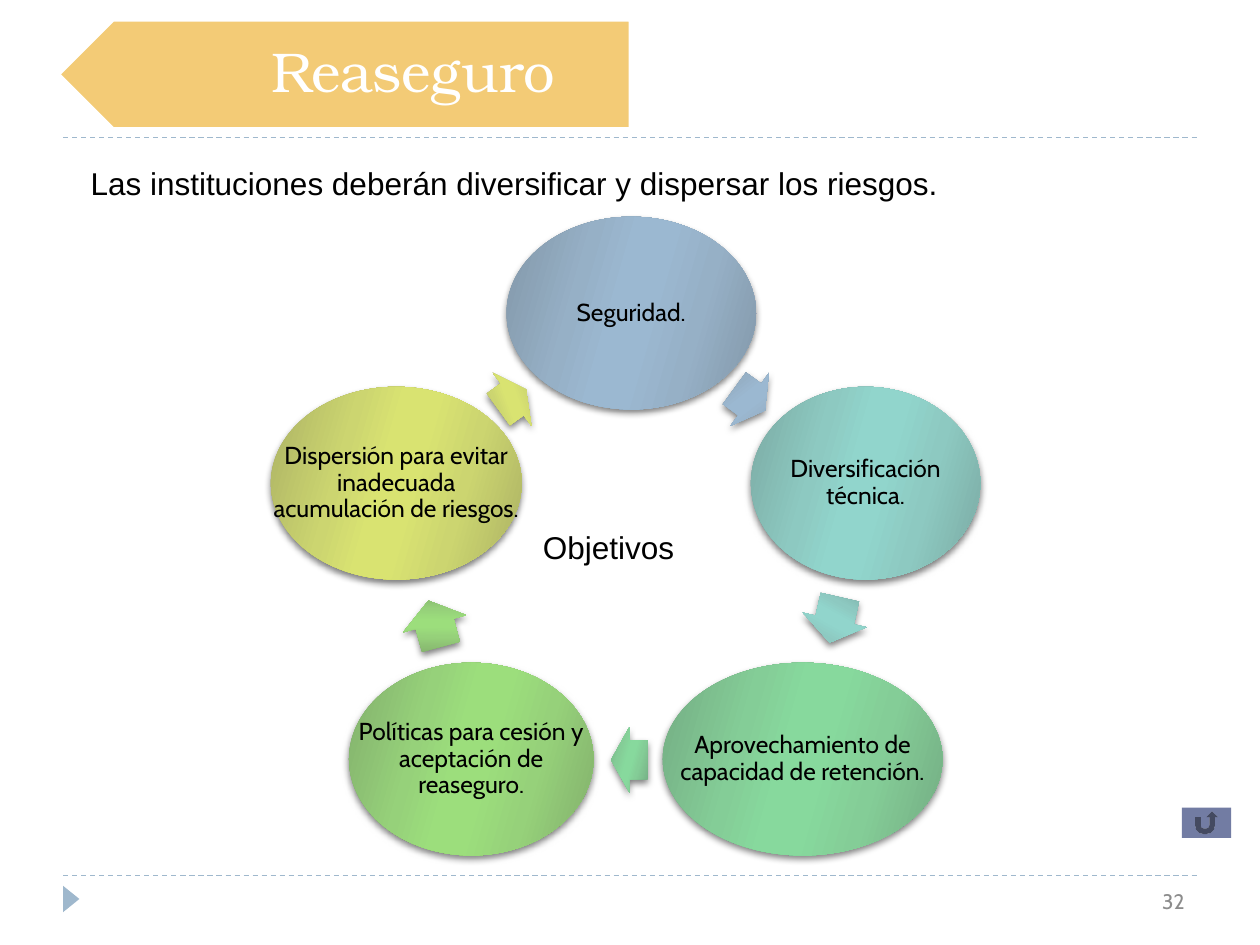
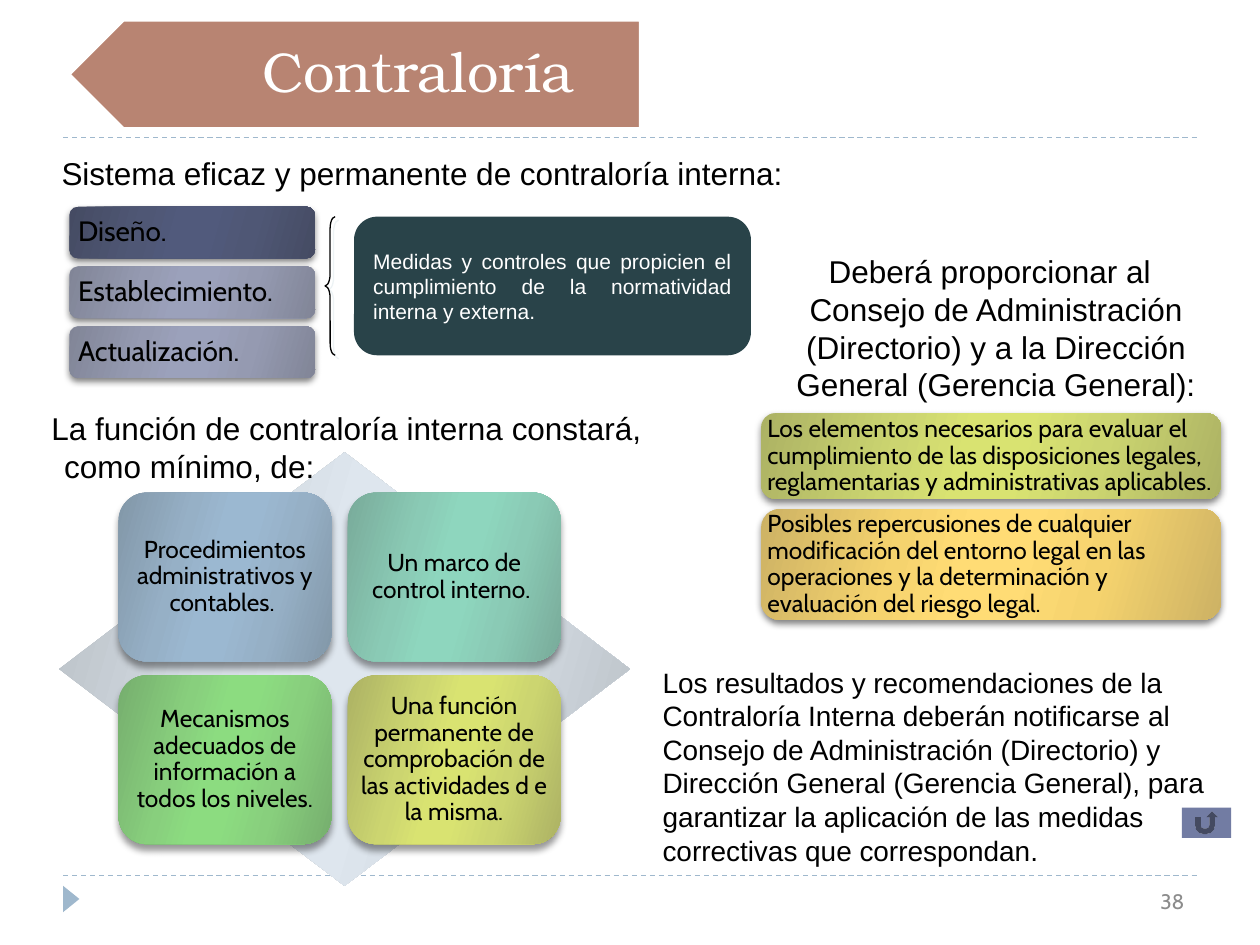
"""Build two Spanish insurance slides: reinsurance goals and internal control."""
from lxml import etree
from pptx import Presentation
from pptx import util as u
from pptx.dml.color import RGBColor
from pptx.enum import dml, shapes, text
from pptx.oxml.ns import qn

WHITE = RGBColor(255, 255, 255)
BLACK = RGBColor(0, 0, 0)
GREY = RGBColor(0x8C, 0x8C, 0x8C)
RULE_BLUE = RGBColor(0x9F, 0xB8, 0xCD)
BUTTON_BLUE = RGBColor(0x72, 0x7C, 0xA3)
DARK_TEAL = RGBColor(0x29, 0x43, 0x49)
PALE_TEAL = RGBColor(0xDD, 0xE9, 0xEC)
GOLD = RGBColor(0xF3, 0xCB, 0x76)
TERRACOTTA = RGBColor(0xB8, 0x84, 0x72)


BLUE, TEAL, EMERALD, GREEN, LIME, MINT, LEAF, AMBER, NAVY, LILAC, MIST = [
    [RGBColor.from_string(code) for code in codes.split()]
    for codes in (
        "8297A8 96B0C6 9BB8D1", "7BAAA3 8DC9C1 91D5CC", "74AC83 84CD97 87D99D",
        "82AF6C 96D17A 9CDE7C", "ACB264 CCD570 D9E371", "79AB9A 8ACAB5 8ED6BE",
        "76AE6E 88CF7D 8CDC80", "CDB264 F5D36E FFDC75", "454B63 4F5775 515A7C",
        "818597 959AB1 9BA1BB", "B6BCC2 D4DCE3 DEE6EE",
    )
]
SOFT_SHADOW = (BLACK, 50, 4, 2, 90)
CARD_SHADOW = (BLACK, 40, 4, 3.4, 90)
BRACE_SHADOW = (PALE_TEAL, 50, 0, 2.8, 45)
ROUND_CORNER_INSET = 0.0488
LEFT, CENTER, RIGHT, JUSTIFY = (text.PP_ALIGN.LEFT, text.PP_ALIGN.CENTER,
                                text.PP_ALIGN.RIGHT, text.PP_ALIGN.JUSTIFY)
TOP, MIDDLE = text.MSO_ANCHOR.TOP, text.MSO_ANCHOR.MIDDLE
KIND = shapes.MSO_SHAPE


def write_text(shape, words, size=18, font="Arial", color=BLACK, align=LEFT, anchor=TOP,
               insets=(0.1, 0.05), spacing=1.0, hanging=0, wrap=True):
    """Write one formatted paragraph into a shape."""
    frame = shape.text_frame
    frame.auto_size = text.MSO_AUTO_SIZE.NONE
    frame.word_wrap = wrap
    frame.vertical_anchor = anchor
    frame.margin_left = frame.margin_right = u.Inches(insets[0])
    frame.margin_top = frame.margin_bottom = u.Inches(insets[1])
    paragraph = frame.paragraphs[0]
    paragraph.alignment = align
    paragraph.line_spacing = spacing
    if hanging:
        properties = paragraph._p.get_or_add_pPr()
        properties.set("marL", str(u.Inches(hanging)))
        properties.set("indent", str(-u.Inches(hanging)))
    run = paragraph.add_run()
    run.text = words
    run.font.name = font
    run.font.size = u.Pt(size)
    run.font.bold = False
    run.font.color.rgb = color


def draw(slide, kind, box, fill=None, line=None, shadow=None, rotation=0, adjustments=()):
    """Draw a preset shape; a list of three colours makes a mirrored gradient."""
    shape = slide.shapes.add_shape(kind, *map(u.Inches, box))
    shape.rotation = rotation
    shape.shadow.inherit = False
    for index, value in enumerate(adjustments):
        shape.adjustments[index] = value
    if fill is None:
        shape.fill.background()
    elif isinstance(fill, list):
        shape.fill.gradient()
        shape.fill.gradient_angle = 344
        stops = shape._element.spPr.find(".//" + qn("a:gsLst"))
        stops.clear()
        edge, middle, core = fill
        for place, color in zip((0, 30, 45, 55, 73, 100), (edge, middle, core, core, middle, edge)):
            stop = etree.SubElement(stops, qn("a:gs"), pos=str(place * 1000))
            etree.SubElement(stop, qn("a:srgbClr"), val=str(color))
    else:
        shape.fill.solid()
        shape.fill.fore_color.rgb = fill
    if line:
        shape.line.color.rgb, shape.line.width = line[0], u.Pt(line[1])
    else:
        shape.line.fill.background()
    if shadow:
        color, opacity, blur, distance, direction = shadow
        effects = shape._element.spPr.find(qn("a:effectLst"))
        outer = etree.SubElement(effects, qn("a:outerShdw"), blurRad=str(u.Pt(blur)),
                                 dist=str(u.Pt(distance)), dir=str(direction * 60000),
                                 algn="ctr", rotWithShape="0")
        tint = etree.SubElement(outer, qn("a:srgbClr"), val=str(color))
        etree.SubElement(tint, qn("a:alpha"), val=str(opacity * 1000))
    return shape


presentation = Presentation()
presentation.slide_width, presentation.slide_height = u.Inches(10), u.Inches(7.5)

for title, number, band_left, band_color in (
    ("Reaseguro", "32", 0.47, GOLD),
    ("Contraloría", "38", 0.55, TERRACOTTA),
):
    slide = presentation.slides.add_slide(presentation.slide_layouts[5])
    for height in (6.95, 1.09):
        rule = slide.shapes.add_connector(shapes.MSO_CONNECTOR.STRAIGHT, u.Inches(0.5),
                                          u.Inches(height), u.Inches(9.5), u.Inches(height))
        rule.line.color.rgb = RULE_BLUE
        rule.line.width = u.Pt(0.75)
        rule.line.dash_style = dml.MSO_LINE.DASH
        etree.SubElement(rule._element.spPr, qn("a:effectLst"))
    draw(slide, KIND.ISOSCELES_TRIANGLE, (0.46, 7.07, 0.21, 0.13), RULE_BLUE, rotation=90)
    draw(slide, KIND.ACTION_BUTTON_RETURN, (9.38, 6.41, 0.39, 0.24), BUTTON_BLUE)
    page_number = slide.shapes.add_textbox(*map(u.Inches, (7.17, 6.95, 2.33, 0.4)))
    write_text(page_number, number, size=12, font="Cabin", color=GREY, align=RIGHT, anchor=MIDDLE)
    band = draw(slide, KIND.PENTAGON, (band_left, 0.16, 4.53, 0.86), band_color, (WHITE, 1.5),
                rotation=180)
    heading = slide.shapes.title
    heading._element.addprevious(band._element)
    heading.left, heading.top = u.Inches(1.56), u.Inches(0.16)
    heading.width, heading.height = u.Inches(band_left + 2.97), u.Inches(0.86)
    write_text(heading, title, size=32, font="TeX Gyre Bonum", color=WHITE, align=CENTER,
               anchor=MIDDLE, insets=(0.17, 0.08), spacing=0.9)

reinsurance, control = presentation.slides

for goal, colors, left, top, width, arrow_left, arrow_top, arrow_width, turn in (
    ("Seguridad.", BLUE, 4.02, 1.72, 1.98, 5.8, 2.91, 0.3, 36),
    ("Diversificación técnica.", TEAL, 5.96, 3.07, 1.82, 6.44, 4.66, 0.37, 102.8),
    ("Aprovechamiento de capacidad de retención.", EMERALD, 5.26, 5.26, 2.22, 4.85, 5.77, 0.29, 180),
    ("Políticas para cesión y aceptación de reaseguro.", GREEN,
     2.77, 5.26, 1.94, 3.26, 4.69, 0.38, 254.8),
    ("Dispersión para evitar inadecuada acumulación de riesgos.", LIME,
     2.15, 3.07, 1.99, 3.93, 2.91, 0.27, 324),
):
    box = (left, top, width, 1.53)
    draw(reinsurance, KIND.OVAL, box, colors, shadow=SOFT_SHADOW)
    label = reinsurance.shapes.add_textbox(*map(u.Inches, box))
    write_text(label, goal, size=14, font="Cabin", align=CENTER, anchor=MIDDLE,
               insets=(0.01, 0.02), spacing=0.9)
    draw(reinsurance, KIND.RIGHT_ARROW, (arrow_left, arrow_top, arrow_width, 0.52), colors,
         shadow=SOFT_SHADOW, rotation=turn, adjustments=(0.6, 0.5))

draw(control, KIND.DIAMOND, (0.47, 3.59, 4.53, 3.44), MIST)
panels = []
for index, (words, colors) in enumerate((
    ("Procedimientos administrativos y contables. ", BLUE),
    ("Un marco de control interno. ", MINT),
    ("Mecanismos adecuados de información a todos los niveles.", LEAF),
    ("Una función permanente de comprobación de las actividades d e la misma.", LIME),
)):
    row, column = divmod(index, 2)
    box = (0.94 + 1.82 * column, 3.91 + 1.45 * row, 1.69, 1.34)
    panels.append((words, colors, box, CARD_SHADOW, 14, CENTER, 0.06))
for index, (words, colors) in enumerate((
    ("Diseño.", NAVY), ("Establecimiento.", LILAC), ("Actualización.", LILAC),
)):
    box = (0.55, 1.64 + 0.475 * index, 1.95, 0.41)
    panels.append((words, colors, box, SOFT_SHADOW, 16, LEFT, 0.07))
for words, colors, top, height in (
    ("Los elementos necesarios para evaluar el cumplimiento de las disposiciones legales, "
     "reglamentarias y administrativas aplicables.", LIME, 3.28, 0.68),
    ("Posibles repercusiones de cualquier modificación del entorno legal en las operaciones "
     "y la determinación y evaluación del riesgo legal.", AMBER, 4.04, 0.88),
):
    panels.append((words, colors, (6.04, top, 3.65, height), SOFT_SHADOW, 14, LEFT, 0.05))
for words, colors, box, shadow, size, align, margin in panels:
    panel = draw(control, KIND.ROUNDED_RECTANGLE, box, colors, shadow=shadow)
    inset = max(0, margin - ROUND_CORNER_INSET * box[3])
    write_text(panel, words, size=size, font="Cabin", align=align, anchor=MIDDLE,
               insets=(inset, inset), spacing=0.9)

measures = draw(control, KIND.ROUNDED_RECTANGLE, (2.81, 1.72, 3.15, 1.1), DARK_TEAL)
write_text(measures, "Medidas y controles que propicien el cumplimiento de la normatividad "
           "interna y externa.", size=12, color=WHITE, align=JUSTIFY, anchor=MIDDLE)
draw(control, KIND.LEFT_BRACE, (2.58, 1.72, 0.08, 1.1), line=(BLACK, 0.75),
     shadow=BRACE_SHADOW, adjustments=(1.18, 0.5))

for slide, words, box, style in (
    (reinsurance, "Las instituciones deberán diversificar y dispersar los riesgos.",
     (0.62, 1.25, 8.91, 0.4), {"hanging": 0.39}),
    (reinsurance, "Objetivos", (4.21, 4.14, 1.25, 0.4), {"wrap": False}),
    (control, "Sistema eficaz y permanente de contraloría interna:",
     (0.39, 1.17, 7.34, 0.4), {"hanging": 0.1}),
    (control, "La función de contraloría interna constará, como mínimo, de:",
     (0.31, 3.2, 4.92, 0.71), {"hanging": 0.1}),
    (control, "Los resultados y recomendaciones de la Contraloría Interna deberán notificarse al "
     "Consejo de Administración (Directorio) y Dirección General (Gerencia General), para "
     "garantizar la aplicación de las medidas correctivas que correspondan.",
     (5.16, 5.23, 4.69, 1.72), {"size": 16}),
    (control, "Deberá proporcionar al Consejo de Administración (Directorio) y a la Dirección "
     "General (Gerencia General):", (6.02, 1.95, 3.67, 1.31), {"align": CENTER, "hanging": 0.1}),
):
    note = slide.shapes.add_textbox(*map(u.Inches, box))
    write_text(note, words, **style)

presentation.save("out.pptx")
